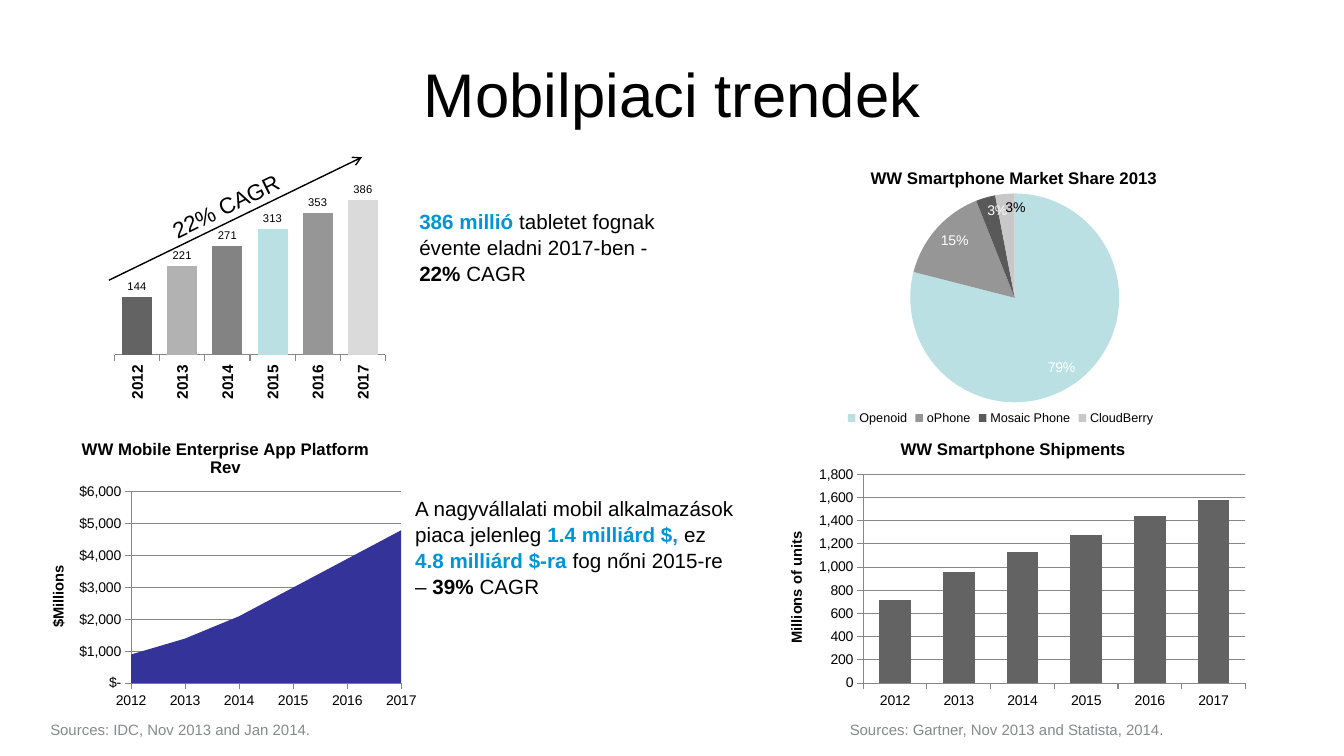
from dataclasses import dataclass

from lxml import etree
from pptx import Presentation
from pptx.chart.chart import Chart
from pptx.chart.data import CategoryChartData
from pptx.dml.color import RGBColor
from pptx.enum.chart import XL_CHART_TYPE, XL_LABEL_POSITION, XL_LEGEND_POSITION, XL_TICK_MARK
from pptx.enum.shapes import MSO_CONNECTOR
from pptx.enum.text import MSO_ANCHOR, MSO_AUTO_SIZE, PP_ALIGN
from pptx.oxml.ns import qn
from pptx.util import Inches, Pt

COLUMN, PIE, AREA = XL_CHART_TYPE.COLUMN_CLUSTERED, XL_CHART_TYPE.PIE, XL_CHART_TYPE.AREA
INSIDE_END, OUTSIDE_END = XL_LABEL_POSITION.INSIDE_END, XL_LABEL_POSITION.OUTSIDE_END
TICK_OUT, TICK_NONE = XL_TICK_MARK.OUTSIDE, XL_TICK_MARK.NONE

FONT = "Arial"
COLORS = {"black": "000000", "white": "FFFFFF", "blue": "0096D6", "source": "87898B",
          "axis": "878787", "bar": "636363", "navy": "333399"}
TABLET_COLORS = ("636363", "B2B2B2", "838383", "BBE0E3", "969696", "DADADA")
SHARE_COLORS = ("BBE0E3", "969696", "595959", "C8C8C8")
YEARS = tuple(str(year) for year in range(2012, 2018))


@dataclass
class Run:
    text: str
    color: str = "black"
    bold: bool = False


@dataclass
class Note:
    box: tuple[float, float, float, float]
    runs: list[Run]
    size: float = 14.7
    spacing: float = 1.05
    after: float = 5.3
    rotation: float = 0


@dataclass
class ChartPart:
    kind: XL_CHART_TYPE
    box: tuple[float, float, float, float]
    plot: tuple[float, float, float, float]  # fractions of the chart
    values: tuple[float, ...]
    cats: tuple[str, ...] = YEARS
    title: str = ""
    title_at: tuple[float, float] = (0, 0)
    number_format: str = "General"
    colors: tuple[str, ...] = ()
    fill: str = "bar"
    gap: int = 100
    axis_title: str = ""
    axis_size: float = 10
    top: float = 0
    step: float = 0


NOTES = [
    Note((8.33, 7.1, 3.67, 0.28), [Run("Sources: Gartner, Nov 2013 and Statista, 2014.", "source")],
         10.7, 1, 0),
    Note((0.4, 7.1, 3.91, 0.28), [Run("Sources: IDC, Nov 2013 and Jan 2014.", "source")], 10.7, 1, 0),
    Note((4.02, 4.86, 3.37, 1.09), [
        Run("A nagyvállalati mobil alkalmazások piaca jelenleg "), Run("1.4 milliárd $, ", "blue", True),
        Run("ez "), Run("4.8 milliárd $-ra ", "blue", True), Run("fog nőni 2015-re – "),
        Run("39% ", bold=True), Run("CAGR")]),
    Note((4.06, 2.01, 2.85, 0.84), [
        Run("386 millió ", "blue", True), Run("tabletet fognak évente eladni 2017-ben - "),
        Run("22%", bold=True), Run(" CAGR")]),
    Note((1.55, 1.8, 1.56, 0.37), [Run("22% CAGR")], 16, rotation=334),
]

TABLETS = ChartPart(COLUMN, (1.08, 1.68, 2.8, 2.33), (0.02, 0.02, 0.96, 0.77),
                    (144, 221, 271, 313, 353, 386), colors=TABLET_COLORS, gap=50,
                    axis_size=11, top=450, step=50)
SHARE = ChartPart(PIE, (7.71, 1.39, 4.71, 3.04), (0.28, 0.17, 0.44, 0.69), (0.79, 0.15, 0.03, 0.03),
                  ("Openoid", "oPhone", "Mosaic Phone", "CloudBerry"), "WW Smartphone Market Share 2013",
                  (0.19, 0.08), "0%", SHARE_COLORS)
SHIPMENTS = ChartPart(COLUMN, (7.59, 4.18, 4.86, 2.92), (0.2, 0.18, 0.78, 0.71),
                      (720, 960, 1130, 1280, 1440, 1580), title="WW Smartphone Shipments",
                      title_at=(0.27, 0.05), number_format="#,##0",
                      axis_title="Millions of units", top=1800, step=200)
REVENUE = ChartPart(AREA, (0.22, 4.18, 4, 2.92), (0.27, 0.24, 0.67, 0.65),
                    (900, 1400, 2100, 3000, 3900, 4800), title="WW Mobile Enterprise App Platform Rev",
                    title_at=(0.14, 0.05), number_format='"$"#,##0;;"$-"', fill="navy",
                    axis_title="$Millions", top=6000, step=1000)


def rgb(name: str) -> RGBColor:
    return RGBColor.from_string(COLORS.get(name, name))


def set_font(font, size: float, color: str = "black", bold: bool = False) -> None:
    font.name, font.size, font.bold = FONT, Pt(size), bold
    font.color.rgb = rgb(color)


def place(el, *fractions: float) -> None:
    """Give a chart element a manual layout: x, y and optionally w, h."""
    for old in el.findall(qn("c:layout")):
        el.remove(old)
    layout = etree.Element(qn("c:layout"))
    manual = etree.SubElement(layout, qn("c:manualLayout"))
    modes = [("xMode", "edge"), ("yMode", "edge")]
    if len(fractions) == 4:
        modes.insert(0, ("layoutTarget", "inner"))
    for tag, value in modes + list(zip("xywh", fractions)):
        etree.SubElement(manual, qn(f"c:{tag}")).set("val", str(value))
    overlay = el.find(qn("c:overlay"))
    el.insert(0 if overlay is None else el.index(overlay), layout)


def label_title(title, text: str, size: float) -> None:
    tf = title.text_frame
    tf.text = text
    set_font(tf.paragraphs[0].runs[0].font, size, bold=True)


def format_axes(chart: Chart, part: ChartPart) -> None:
    cat, val = chart.category_axis, chart.value_axis
    val.minimum_scale, val.maximum_scale, val.major_unit = 0, part.top, part.step
    val.has_major_gridlines = val.visible = bool(part.axis_title)
    for axis in (cat, val):
        axis.major_tick_mark, axis.minor_tick_mark = TICK_OUT, TICK_NONE
        axis.format.line.color.rgb = rgb("axis")
        set_font(axis.tick_labels.font, part.axis_size, bold=not part.axis_title)
    if part.axis_title:
        val.major_gridlines.format.line.color.rgb = rgb("axis")
        val.tick_labels.number_format = part.number_format
        val.tick_labels.number_format_is_linked = False
        label_title(val.axis_title, part.axis_title, 10.5)
    else:
        text = cat.tick_labels.font._element.find(".//" + qn("a:bodyPr"))
        if text is None:
            text = cat._element.find(".//" + qn("a:bodyPr"))
        text.set("rot", "-5400000")
        text.set("vert", "horz")


def add_chart(s, part: ChartPart) -> Chart:
    data = CategoryChartData(number_format=part.number_format)
    data.categories = part.cats
    data.add_series("Series 1", part.values)
    chart = s.shapes.add_chart(part.kind, *map(Inches, part.box), data).chart
    set_font(chart.font, 10)
    chart.has_legend = False
    chart.has_title = bool(part.title)
    root = chart._chartSpace
    if part.title:
        label_title(chart.chart_title, part.title, 12)
        place(root.find(".//" + qn("c:title")), *part.title_at)
    place(root.find(".//" + qn("c:plotArea")), *part.plot)
    plot = chart.plots[0]
    plot.vary_by_categories = part.kind == PIE
    series = plot.series[0]
    for fmt, color in ([(series.points[i].format, c) for i, c in enumerate(part.colors)]
                       or [(series.format, part.fill)]):
        fmt.fill.solid()
        fmt.fill.fore_color.rgb = rgb(color)
    if part.kind == COLUMN:
        plot.gap_width = part.gap
    if part.kind != PIE:
        format_axes(chart, part)
    return chart


def add_labels(chart: Chart, part: ChartPart, size: float, color: str, position) -> None:
    labels = chart.plots[0].series[0].data_labels
    labels.show_value = True
    labels.number_format, labels.number_format_is_linked = part.number_format, False
    labels.position = position
    set_font(labels.font, size, color)


def add_note(s, note: Note) -> None:
    sp = s.shapes.add_textbox(*map(Inches, note.box))
    sp.rotation = note.rotation
    tf = sp.text_frame
    tf.word_wrap = True
    p = tf.paragraphs[0]
    p.line_spacing, p.space_after = note.spacing, Pt(note.after)
    for run in note.runs:
        r = p.add_run()
        r.text = run.text
        set_font(r.font, note.size, run.color, run.bold)


def main() -> None:
    prs = Presentation()
    prs.slide_width, prs.slide_height = Inches(13.33), Inches(7.5)
    s = prs.slides.add_slide(prs.slide_layouts[5])

    # Title
    sp = s.shapes.title
    sp.left, sp.top, sp.width, sp.height = map(Inches, (0.67, 0.3, 12, 1.25))
    tf = sp.text_frame
    tf.text = "Mobilpiaci trendek"
    tf.auto_size, tf.vertical_anchor = MSO_AUTO_SIZE.NONE, MSO_ANCHOR.MIDDLE
    tf.paragraphs[0].alignment = PP_ALIGN.CENTER
    set_font(tf.paragraphs[0].runs[0].font, 44)

    # Charts
    add_labels(add_chart(s, TABLETS), TABLETS, 8, "black", OUTSIDE_END)
    share = add_chart(s, SHARE)
    add_labels(share, SHARE, 10, "white", INSIDE_END)
    last = share.plots[0].series[0].points[3].data_label
    set_font(last.font, 10)
    last.position = INSIDE_END
    share.has_legend = True
    share.legend.position = XL_LEGEND_POSITION.BOTTOM
    share.legend.include_in_layout = False
    set_font(share.legend.font, 9)
    place(share.legend._element, 0.14, 0.87)
    add_chart(s, SHIPMENTS)
    add_chart(s, REVENUE)

    # Growth arrow
    arrow = s.shapes.add_connector(MSO_CONNECTOR.STRAIGHT, *map(Inches, (1.08, 2.78, 3.59, 1.56)))
    arrow.line.color.rgb, arrow.line.width = rgb("black"), Pt(1)
    etree.SubElement(arrow.line._get_or_add_ln(), qn("a:tailEnd")).set("type", "arrow")
    etree.SubElement(arrow._element.spPr, qn("a:effectLst"))

    # Notes and sources
    for note in NOTES:
        add_note(s, note)
    prs.save("out.pptx")


if __name__ == "__main__":
    main()
